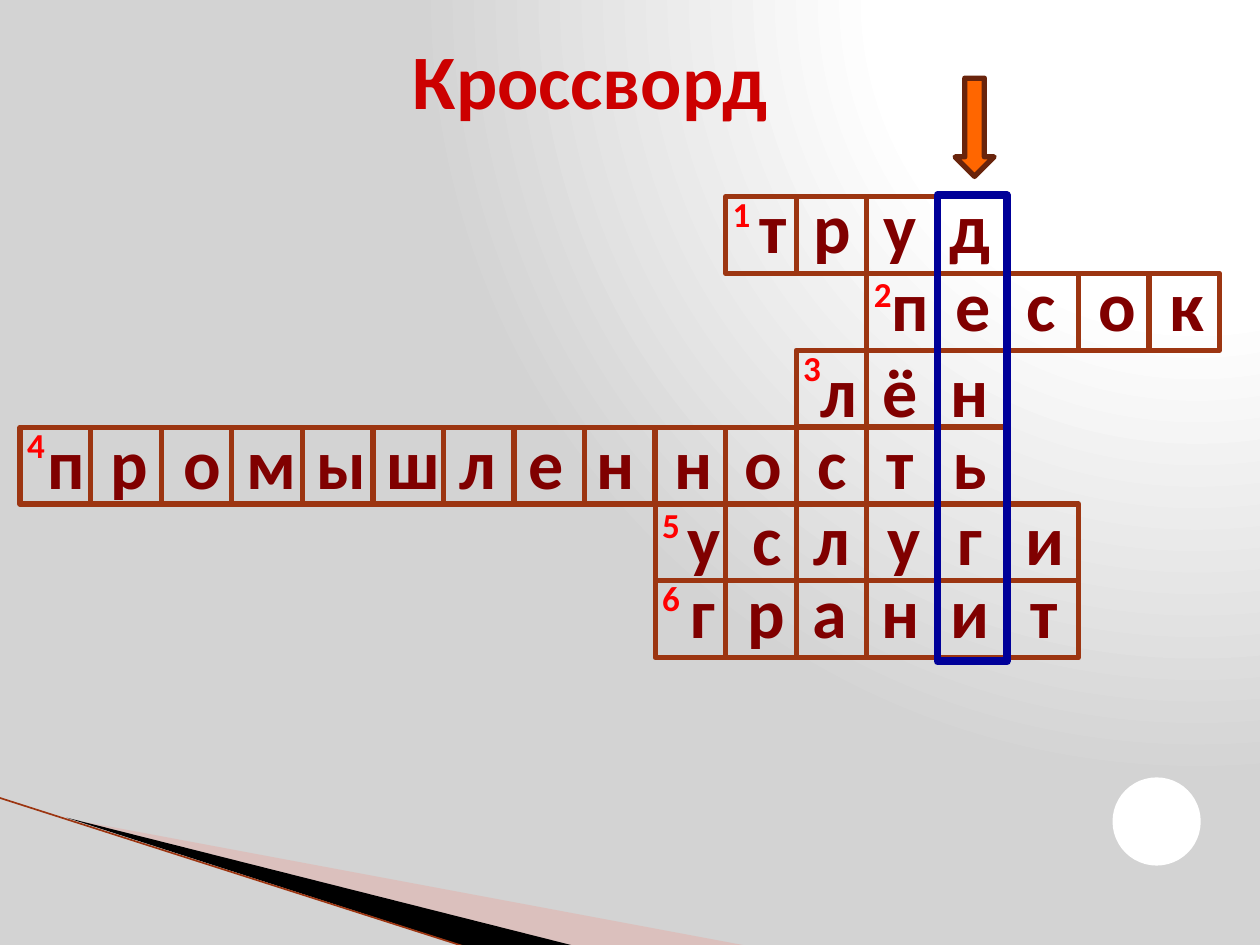
from lxml import etree
from pptx import Presentation
from pptx.dml.color import RGBColor
from pptx.enum.shapes import MSO_CONNECTOR, MSO_SHAPE
from pptx.enum.text import MSO_ANCHOR, MSO_AUTO_SIZE, PP_ALIGN
from pptx.oxml.ns import qn
from pptx.util import Inches, Pt

RECTANGLE, ELLIPSE, DOWN_ARROW = MSO_SHAPE.RECTANGLE, MSO_SHAPE.OVAL, MSO_SHAPE.DOWN_ARROW
STRAIGHT = MSO_CONNECTOR.STRAIGHT
CENTER, MIDDLE = PP_ALIGN.CENTER, MSO_ANCHOR.MIDDLE
GROW = MSO_AUTO_SIZE.SHAPE_TO_FIT_TEXT

COLORS = {
    "white": "FFFFFF", "gray": "D3D3D3", "black": "000000", "pink": "E9A59D",
    "brown": "9C3511", "dark_brown": "69240C", "orange": "FF6600",
    "navy": "000099", "title": "CC0000", "number": "FF0000", "letter": "800000",
}
FORMATS = {
    "title": {"size": Pt(44), "bold": True, "name": "Calibri"},
    "number": {"size": Pt(20), "bold": True, "name": "Calibri"},
    "letter": {"size": Pt(40), "bold": True, "name": "Calibri"},
}

GRID_LEFT, GRID_TOP = 0.16, 1.56
CELL_WIDTH, CELL_HEIGHT = 0.56, 0.61
NUMBER_SHIFT = -0.15

# word, first column, top of the number, top of the letters, left of each letter
WORDS = [
    ("труд", 10, 1.48, 1.41, [5.86, 6.33, 6.87, 7.42]),
    ("песок", 12, 2.11, 2.03, [6.95, 7.45, 7.99, 8.59, 9.14]),
    ("лён", 11, 2.7, 2.71, [6.38, 6.87, 7.42]),
    ("промышленность", 0, 3.31, 3.28,
     [0.25, 0.75, 1.33, 1.86, 2.41, 2.97, 3.52, 4.06, 4.61, 5.23, 5.78, 6.33, 6.87, 7.42]),
    ("услуги", 9, 3.95, 3.88, [5.31, 5.81, 6.33, 6.9, 7.42, 8.02]),
    ("гранит", 9, 4.53, 4.46, [5.3, 5.81, 6.31, 6.87, 7.42, 8.01]),
]


def color(name):
    return RGBColor.from_string(COLORS[name])


class SlideBuilder:
    def __init__(self, page):
        self.page = page

    def background(self):
        """Radial gradient that is centred beyond the top right corner."""
        self.page.background.fill.gradient()
        gradient = self.page.element.find(".//" + qn("a:gradFill"))
        for child in list(gradient):
            gradient.remove(child)
        stops = etree.SubElement(gradient, qn("a:gsLst"))
        for position, name in ((0, "white"), (40, "white"), (100, "gray")):
            stop = etree.SubElement(stops, qn("a:gs"), pos=str(position * 1000))
            etree.SubElement(stop, qn("a:srgbClr"), val=COLORS[name])
        circle = etree.SubElement(gradient, qn("a:path"), path="circle")
        etree.SubElement(circle, qn("a:fillToRect"), l="95000", t="-106000", r="5000", b="206000")

    def paint(self, shape, fill=None, line=None, weight=3, alpha=None):
        shape.shadow.inherit = False
        if fill:
            shape.fill.solid()
            shape.fill.fore_color.rgb = color(fill)
            if alpha:
                tone = shape._element.spPr.find(qn("a:solidFill")).find(qn("a:srgbClr"))
                etree.SubElement(tone, qn("a:alpha"), val=str(alpha * 1000))
        else:
            shape.fill.background()
        if line:
            shape.line.color.rgb = color(line)
            shape.line.width = Pt(weight)
        else:
            shape.line.fill.background()

    def shape(self, kind, left, top, width, height, **style):
        shape = self.page.shapes.add_shape(
            kind, Inches(left), Inches(top), Inches(width), Inches(height))
        self.paint(shape, **style)

    def polygon(self, points, **style):
        start, *others = [(Inches(x), Inches(y)) for x, y in points]
        builder = self.page.shapes.build_freeform(*start)
        builder.add_line_segments(others, close=True)
        self.paint(builder.convert_to_shape(), **style)

    def line(self, start, end, name, weight):
        connector = self.page.shapes.add_connector(
            STRAIGHT, *[Inches(value) for value in (*start, *end)])
        connector.line.color.rgb = color(name)
        connector.line.width = Pt(weight)
        etree.SubElement(connector._element.spPr, qn("a:effectLst"))

    def text(self, words, style, left, top, width, height, outlined=True):
        box = self.page.shapes.add_textbox(
            Inches(left), Inches(top), Inches(width), Inches(height))
        frame = box.text_frame
        frame.word_wrap = True
        if outlined:
            frame.auto_size = GROW
        else:
            frame.vertical_anchor = MIDDLE
        para = frame.paragraphs[0]
        para.alignment = CENTER
        span = para.add_run()
        span.text = words
        for key, value in FORMATS[style].items():
            setattr(span.font, key, value)
        span.font.color.rgb = color(style)
        if outlined:
            outline = etree.Element(qn("a:ln"), w=str(Pt(1)))
            fill = etree.SubElement(outline, qn("a:solidFill"))
            etree.SubElement(fill, qn("a:srgbClr"), val=COLORS[style])
            span.font._element.insert(0, outline)


def main():
    deck = Presentation()
    deck.slide_width, deck.slide_height = Inches(10), Inches(7.5)
    slide = SlideBuilder(deck.slides.add_slide(deck.slide_layouts[6]))

    slide.background()
    slide.polygon([(0.55, 6.5), (5.95, 7.51), (4.56, 7.51)], fill="pink", alpha=40)
    slide.polygon([(0.53, 6.49), (4.57, 7.51), (3.72, 7.52)], fill="black")
    slide.line((-0.01, 6.33), (3.71, 7.52), "brown", 0.95)

    for row, (word, first_column, *_) in enumerate(WORDS):
        for column in range(first_column, first_column + len(word)):
            slide.shape(RECTANGLE, GRID_LEFT + column * CELL_WIDTH, GRID_TOP + row * CELL_HEIGHT,
                        CELL_WIDTH, CELL_HEIGHT, line="brown")

    for number, (word, first_column, number_top, letter_top, lefts) in enumerate(WORDS, 1):
        number_left = GRID_LEFT + first_column * CELL_WIDTH + NUMBER_SHIFT
        slide.text(str(number), "number", number_left, number_top, 0.55, 0.44)
        for letter, left in zip(word, lefts):
            slide.text(letter, "letter", left, letter_top, 0.55, 0.77)

    slide.shape(DOWN_ARROW, 7.58, 0.62, 0.31, 0.78, fill="orange", line="dark_brown")
    slide.shape(ELLIPSE, 8.83, 6.17, 0.7, 0.7, fill="white")
    slide.text("Кроссворд", "title", 2.34, 0.23, 4.69, 0.79, outlined=False)
    slide.shape(RECTANGLE, 7.44, 1.55, 0.55, 3.7, line="navy", weight=4.5)

    deck.save("out.pptx")


if __name__ == "__main__":
    main()
